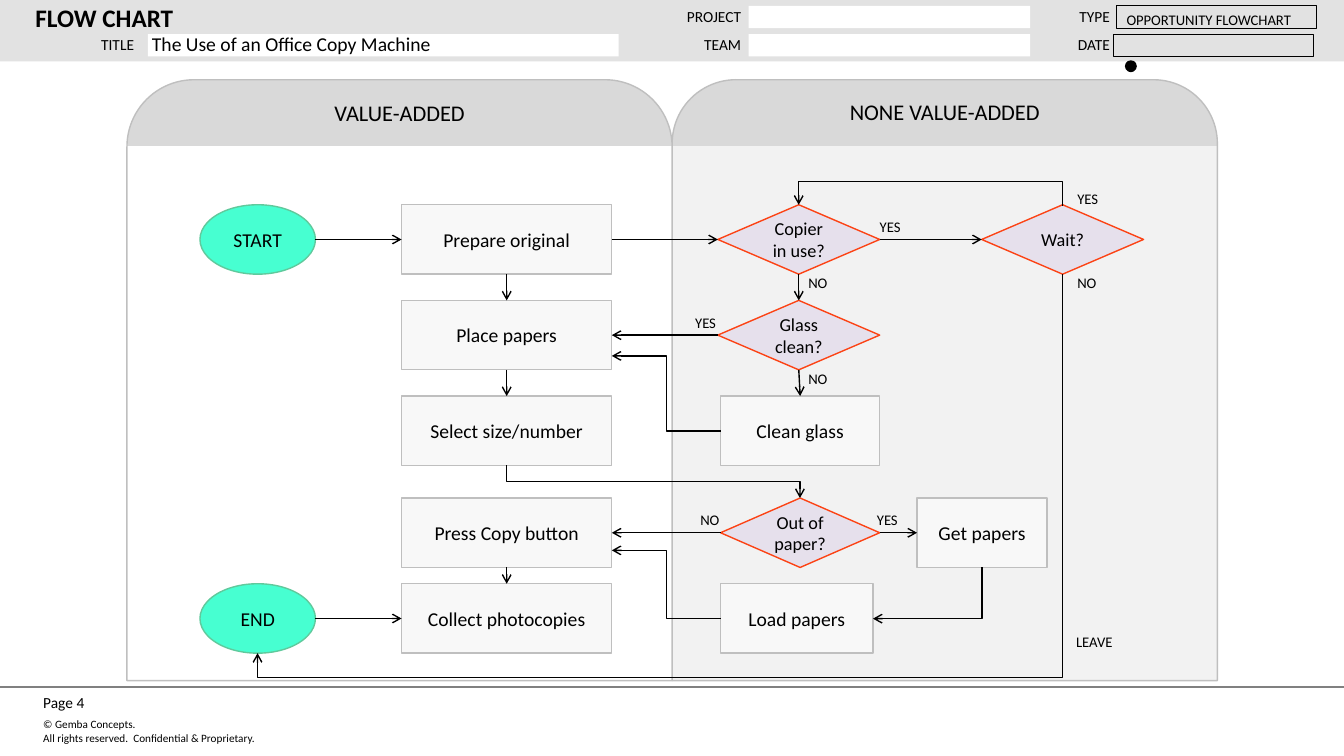
import lxml.etree as etree
import pptx
import pptx.dml.color
import pptx.enum.shapes
import pptx.enum.text
import pptx.oxml.ns
import pptx.util

Cm = pptx.util.Cm
Pt = pptx.util.Pt
qn = pptx.oxml.ns.qn
SHAPE = pptx.enum.shapes.MSO_SHAPE
CONNECTOR = pptx.enum.shapes.MSO_CONNECTOR
ALIGN = pptx.enum.text.PP_ALIGN
ANCHOR = pptx.enum.text.MSO_ANCHOR

TOP, LEFT, BOTTOM, RIGHT = range(4)
ROWS = [5.16, 7.57, 9.98, 12.55, 14.71]
BOX_H = 1.75
STEP_X, STEP_W = 10.12, 5.3
TERMINAL_X, TERMINAL_W = 5.04, 2.91


def rgb(value):
    """Return the colour for a hex string."""
    return pptx.dml.color.RGBColor.from_string(value)


def write(s, text, size=14, bold=False, align=ALIGN.CENTER, anchor=ANCHOR.MIDDLE,
          inset=(0.25, 0.13), wrap=True, spacing=None):
    """Put text into a shape, one paragraph per line."""
    tf = s.text_frame
    tf.word_wrap = wrap
    tf.vertical_anchor = anchor
    tf.margin_left = tf.margin_right = Cm(inset[0])
    tf.margin_top = tf.margin_bottom = Cm(inset[1])
    for i, line in enumerate(text.split("\n")):
        p = tf.add_paragraph() if i else tf.paragraphs[0]
        p.alignment = align
        p.line_spacing = spacing
        r = p.add_run()
        r.text = line
        r.font.name = "Calibri"
        r.font.size = Pt(size)
        r.font.bold = bold
        r.font.color.rgb = rgb("000000")


def add_text(slide, text, x, y, w, h, **fmt):
    """Add a text box."""
    write(slide.shapes.add_textbox(Cm(x), Cm(y), Cm(w), Cm(h)), text, **fmt)


def add_box(slide, kind, x, y, w, h, fill=None, line=None, width=1):
    """Add a flat preset shape."""
    s = slide.shapes.add_shape(kind, Cm(x), Cm(y), Cm(w), Cm(h))
    s.shadow.inherit = False
    if fill:
        s.fill.solid()
        s.fill.fore_color.rgb = rgb(fill)
    else:
        s.fill.background()
    if line:
        s.line.color.rgb = rgb(line)
        s.line.width = Pt(width)
    else:
        s.line.fill.background()
    return s


def add_step(slide, text, row, x=STEP_X, w=STEP_W):
    """Add a process rectangle."""
    s = add_box(slide, SHAPE.RECTANGLE, x, ROWS[row], w, BOX_H, "F8F8F8", "BFBFBF")
    write(s, text)
    return s


def add_decision(slide, text, row, x, w):
    """Add a decision diamond."""
    s = add_box(slide, SHAPE.FLOWCHART_DECISION, x, ROWS[row], w, BOX_H, "E6E0EC", "FC4315")
    write(s, text, size=13)
    return s


def add_terminal(slide, text, row):
    """Add a start or end oval and return its arrow's starting point."""
    s = add_box(slide, SHAPE.OVAL, TERMINAL_X, ROWS[row], TERMINAL_W, BOX_H, "47FFD1", "60C99C")
    write(s, text)
    return TERMINAL_X + TERMINAL_W, ROWS[row] + BOX_H / 2


def add_lane(slide, text, x, body, corner):
    """Add a swim lane with a grey heading band."""
    s = add_box(slide, SHAPE.ROUND_2_SAME_RECTANGLE, x, 2.01, 13.74, 15.14, None, "BFBFBF")
    s.adjustments[0] = corner
    s.fill.gradient()
    s.fill.gradient_angle = 90
    stops = s._element.spPr.find(qn("a:gradFill")).find(qn("a:gsLst"))
    for old in list(stops):
        stops.remove(old)
    for pos, color in ((0, body), (89, body), (89, "D9D9D9"), (100, "D9D9D9")):
        gs = etree.SubElement(stops, qn("a:gs"), pos=str(pos * 1000))
        etree.SubElement(gs, qn("a:srgbClr"), val=color)
    write(s, text, size=16, anchor=ANCHOR.TOP, inset=(0.1, 0))


def add_line(slide, kind, x1, y1, x2, y2, color="000000", width=1, arrow=True):
    """Add a connector without shadow."""
    c = slide.shapes.add_connector(kind, Cm(x1), Cm(y1), Cm(x2), Cm(y2))
    c.line.color.rgb = rgb(color)
    c.line.width = Pt(width)
    pr = c._element.spPr
    if arrow:
        etree.SubElement(pr.find(qn("a:ln")), qn("a:tailEnd"), type="arrow")
    etree.SubElement(pr, qn("a:effectLst"))
    return c


def add_arrow(slide, start, end, end_side, start_side=None):
    """Join two shapes, or a point and a shape, with a straight arrow."""
    x, y = start if start_side is None else (0, 0)
    c = add_line(slide, CONNECTOR.STRAIGHT, x, y, x, y)
    if start_side is not None:
        c.begin_connect(start, start_side)
    c.end_connect(end, end_side)


def add_vertical_elbow(slide, x1, y1, x2, y2, turn=None):
    """Add an elbow arrow leaving vertically, with a crossbar at height turn if given."""
    cx, cy, dx, dy = (x1 + x2) / 2, (y1 + y2) / 2, x2 - x1, y2 - y1
    c = add_line(slide, CONNECTOR.ELBOW, cx - dy / 2, cy + dx / 2, cx + dy / 2, cy - dx / 2)
    pr = c._element.spPr
    pr.find(qn("a:xfrm")).set("rot", "5400000")
    geom = pr.find(qn("a:prstGeom"))
    if turn is None:
        geom.set("prst", "bentConnector2")
    else:
        adj = round((turn - y1) / dy * 100000)
        etree.SubElement(geom.find(qn("a:avLst")), qn("a:gd"), name="adj1", fmla=f"val {adj}")


def add_header(slide):
    """Add the title band with its fields."""
    add_box(slide, SHAPE.RECTANGLE, 0, 0, 33.87, 1.55, "E2E2E2")
    add_text(slide, "FLOW CHART", 0.79, 0, 14.71, 0.86, size=18, bold=True,
             align=ALIGN.LEFT, inset=(0.1, 0.1))
    for text, x, y, w in (("PROJECT", 15.88, 0.13, 2.9), ("TEAM", 15.88, 0.84, 2.9),
                          ("TYPE", 26.01, 0.13, 2.06), ("DATE", 26.01, 0.84, 2.06),
                          ("TITLE", 0.38, 0.84, 3.1)):
        add_text(slide, text, x, y, w, 0.58, size=11, align=ALIGN.RIGHT, inset=(0.1, 0.1))
    title = add_box(slide, SHAPE.RECTANGLE, 3.73, 0.86, 11.86, 0.56, "FFFFFF")
    write(title, "The Use of an Office Copy Machine", align=ALIGN.LEFT,
          inset=(0.1, 0.1), spacing=0.9)
    for y in (0.15, 0.86):
        add_box(slide, SHAPE.RECTANGLE, 18.87, y, 7.09, 0.56, "FFFFFF")
    add_box(slide, SHAPE.RECTANGLE, 28.07, 0.86, 5.03, 0.56, None, "000000", 0.75)
    kind = add_box(slide, SHAPE.RECTANGLE, 28.14, 0.15, 5.03, 0.56, None, "000000", 0.75)
    write(kind, "OPPORTUNITY FLOWCHART", size=10.5, align=ALIGN.LEFT, anchor=ANCHOR.TOP)
    add_box(slide, SHAPE.OVAL, 28.35, 1.52, 0.3, 0.3, "000000")


def add_footer(slide):
    """Add the rule, page number and copyright."""
    add_line(slide, CONNECTOR.STRAIGHT, 0, 17.32, 33.87, 17.32, "808080", 1.5, arrow=False)
    for text, y, w, h, size in (
            ("Page 4", 17.32, 2.39, 0.76, 11),
            ("© Gemba Concepts.\nAll rights reserved.  Confidential & Proprietary.",
             17.93, 10.95, 0.99, 8)):
        add_text(slide, text, 0.94, y, w, h, size=size, align=ALIGN.LEFT,
                 anchor=ANCHOR.TOP, inset=(0.15, 0.15))


def add_flow(slide):
    """Add the steps, decisions, arrows and branch labels."""
    steps = [add_step(slide, text, row) for row, text in enumerate(
        ("Prepare original", "Place papers", "Select size/number",
         "Press Copy button", "Collect photocopies"))]
    prepare, place, select, press, collect = steps
    in_use = add_decision(slide, "Copier in use?", 0, 18.09, 4.08)
    wait = add_decision(slide, "Wait?", 0, 24.74, 4.08)
    glass = add_decision(slide, "Glass clean?", 1, 18.09, 4.08)
    paper = add_decision(slide, "Out of paper?", 3, 18.16, 4.01)
    clean = add_step(slide, "Clean glass", 2, 18.16, 4.01)
    get = add_step(slide, "Get papers", 3, 23.11, 3.28)
    add_step(slide, "Load papers", 4, 18.16, 3.84)

    add_arrow(slide, add_terminal(slide, "START", 0), prepare, LEFT)
    add_arrow(slide, add_terminal(slide, "END", 4), collect, LEFT)
    for a, b in ((prepare, in_use), (in_use, wait), (paper, get)):
        add_arrow(slide, a, b, LEFT, RIGHT)
    for a, b in ((prepare, place), (place, select), (press, collect),
                 (in_use, glass), (glass, clean)):
        add_arrow(slide, a, b, TOP, BOTTOM)
    for a, b in ((glass, place), (paper, press)):
        add_arrow(slide, a, b, RIGHT, LEFT)

    for y1, y2 in ((10.86, 8.97), (15.59, 13.87)):
        add_line(slide, CONNECTOR.ELBOW, 18.16, y1, STEP_X + STEP_W, y2)
    add_vertical_elbow(slide, 26.78, 5.18, 20.13, 5.16, turn=4.57)
    add_vertical_elbow(slide, 12.77, 11.73, 20.16, 12.55, turn=12.14)
    add_vertical_elbow(slide, 26.78, 6.91, 6.49, 16.46, turn=17.07)
    add_vertical_elbow(slide, 24.75, 14.3, 22, 15.59)

    for text, x, y, w in (("YES", 21.92, 5.36, 1.07), ("YES", 26.9, 4.66, 1.07),
                          ("YES", 17.27, 7.78, 1.07), ("YES", 21.85, 12.74, 1.07),
                          ("NO", 20.12, 6.78, 1.02), ("NO", 26.9, 6.76, 1.02),
                          ("NO", 20.12, 9.2, 1.02), ("NO", 17.4, 12.74, 1.02),
                          ("LEAVE", 26.87, 15.82, 1.6)):
        add_text(slide, text, x, y, w, 0.69, size=10.5, align=ALIGN.LEFT,
                 anchor=ANCHOR.TOP, wrap=False)


def main():
    """Build the flow chart slide."""
    prs = pptx.Presentation()
    prs.slide_width, prs.slide_height = Cm(33.87), Cm(19.05)
    slide = prs.slides.add_slide(prs.slide_layouts[6])
    add_footer(slide)
    add_header(slide)
    add_lane(slide, "NONE VALUE-ADDED", 16.94, "F2F2F2", 0.117)
    add_lane(slide, "VALUE-ADDED", 3.2, "FFFFFF", 0.123)
    add_flow(slide)
    prs.save("out.pptx")


if __name__ == "__main__":
    main()
